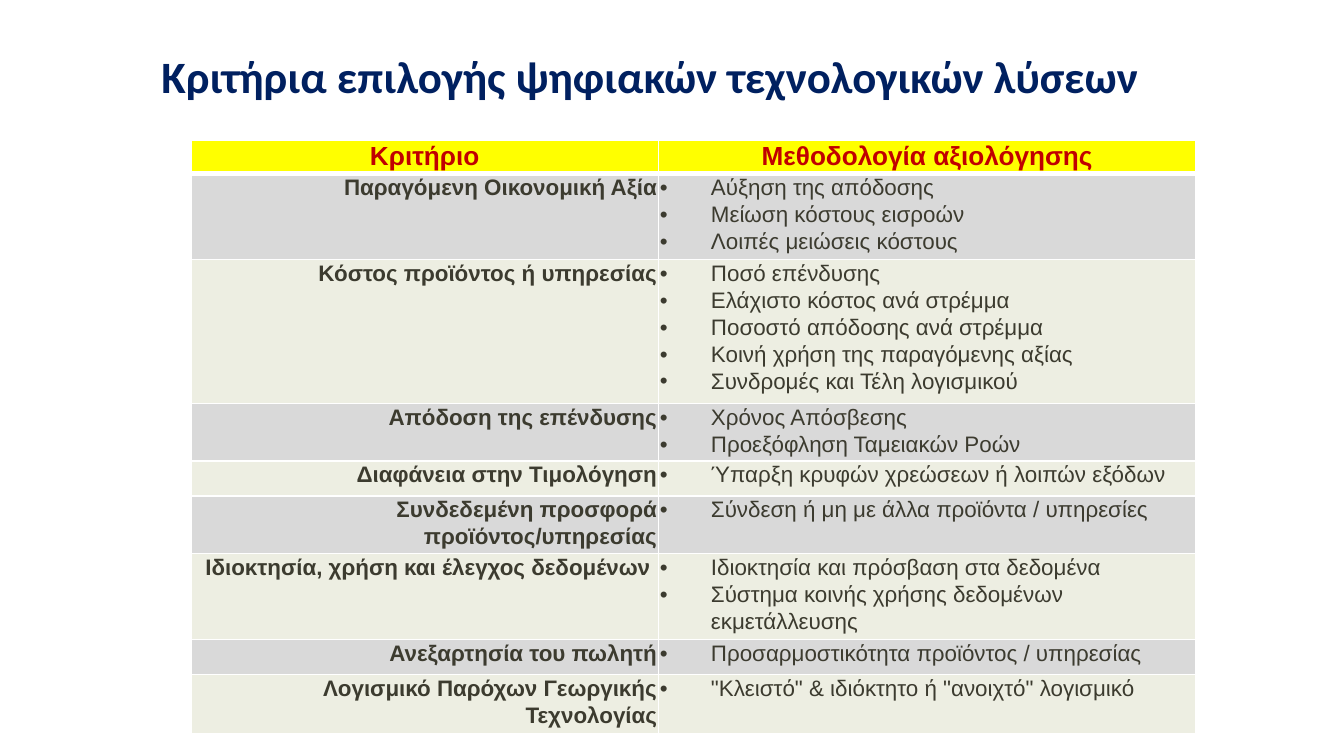
from lxml import etree
from pptx import Presentation
from pptx.dml.color import RGBColor
from pptx.enum.text import MSO_ANCHOR, MSO_AUTO_SIZE, PP_ALIGN
from pptx.oxml.ns import qn
from pptx.util import Inches, Pt

CENTER, LEFT, RIGHT = PP_ALIGN.CENTER, PP_ALIGN.LEFT, PP_ALIGN.RIGHT
TOP = MSO_ANCHOR.TOP
FIT = MSO_AUTO_SIZE.SHAPE_TO_FIT_TEXT

COLORS = {
    "title": "002060",
    "head": "C00000",
    "text": "3C3B2F",
    "yellow": "FFFF00",
    "gray": "D9D9D9",
    "green": "EDEEE2",
    "line": "FFFFFF",
}

TITLE = "Κριτήρια επιλογής ψηφιακών τεχνολογικών λύσεων"
HEADS = ("Κριτήριο", "Μεθοδολογία αξιολόγησης")

# Row height, criterion, evaluation methods
ROWS = [
    (0.61, "Παραγόμενη Οικονομική Αξία",
     ["Αύξηση της απόδοσης", "Μείωση κόστους εισροών",
      "Λοιπές μειώσεις κόστους"]),
    (1.02, "Κόστος προϊόντος ή υπηρεσίας",
     ["Ποσό επένδυσης", "Ελάχιστο κόστος ανά στρέμμα",
      "Ποσοστό απόδοσης ανά στρέμμα", "Κοινή χρήση της παραγόμενης αξίας",
      "Συνδρομές και Τέλη λογισμικού"]),
    (0.41, "Απόδοση της επένδυσης",
     ["Χρόνος Απόσβεσης", "Προεξόφληση Ταμειακών Ροών"]),
    (0.26, "Διαφάνεια στην Τιμολόγηση",
     ["Ύπαρξη κρυφών χρεώσεων ή λοιπών εξόδων"]),
    (0.3, "Συνδεδεμένη προσφορά προϊόντος/υπηρεσίας",
     ["Σύνδεση ή μη με άλλα προϊόντα / υπηρεσίες"]),
    (0.54, "Ιδιοκτησία, χρήση και έλεγχος δεδομένων ",
     ["Ιδιοκτησία και πρόσβαση στα δεδομένα",
      "Σύστημα κοινής χρήσης δεδομένων εκμετάλλευσης"]),
    (0.26, "Ανεξαρτησία του πωλητή",
     ["Προσαρμοστικότητα προϊόντος / υπηρεσίας"]),
    (0.44, "Λογισμικό Παρόχων Γεωργικής Τεχνολογίας",
     ['"Κλειστό" & ιδιόκτητο ή "ανοιχτό" λογισμικό']),
]


class Deck:
    def __init__(self):
        self.prs = Presentation()
        self.prs.slide_width = Inches(10)
        self.prs.slide_height = Inches(10 * 9 / 16)
        self.slide = self.prs.slides.add_slide(self.prs.slide_layouts[5])

    def style(self, para, font, size, color, bold):
        for run in para.runs:
            run.font.name = font
            run.font.size = Pt(size)
            run.font.bold = bold
            run.font.color.rgb = RGBColor.from_string(COLORS[color])

    def title(self, text, left, top, width, height):
        box = self.slide.shapes.title
        box.left, box.top = Inches(left), Inches(top)
        box.width, box.height = Inches(width), Inches(height)
        frame = box.text_frame
        frame.text = text
        frame.word_wrap = False
        frame.auto_size = FIT
        frame.vertical_anchor = TOP
        para = frame.paragraphs[0]
        para.alignment = CENTER
        self.style(para, "Calibri", 24, "title", True)

    def bullet(self, para):
        props = para._p.get_or_add_pPr()
        props.set("marL", str(Inches(0.38)))
        props.set("indent", str(-Inches(0.38)))
        etree.SubElement(props, qn("a:buFont")).set("typeface", "Arial")
        etree.SubElement(props, qn("a:buChar")).set("char", "•")

    def border(self, cell, sides):
        props = cell._tc.get_or_add_tcPr()
        for i, (side, width) in enumerate(sides.items()):
            line = etree.Element(qn("a:ln" + side), w=str(Pt(width)))
            fill = etree.SubElement(line, qn("a:solidFill"))
            tint = etree.SubElement(fill, qn("a:srgbClr"))
            tint.set("val", COLORS["line"])
            props.insert(i, line)

    def cell(self, cell, lines, fill, align, size=12, color="text",
             bold=True, bullets=False):
        cell.fill.solid()
        cell.fill.fore_color.rgb = RGBColor.from_string(COLORS[fill])
        cell.margin_left = cell.margin_right = Inches(0.01)
        cell.margin_top = cell.margin_bottom = 0
        cell.text_frame.text = "\n".join(lines)
        for para in cell.text_frame.paragraphs:
            if bullets:
                self.bullet(para)
            para.alignment = align
            para.line_spacing = 1.07
            self.style(para, "Arial", size, color, bold)

    def table(self, heads, rows, left, top, widths, height):
        frame = self.slide.shapes.add_table(
            len(rows) + 1, len(heads), Inches(left), Inches(top),
            Inches(sum(widths)), Inches(height))
        grid = frame.table
        for col, width in zip(grid.columns, widths):
            col.width = Inches(width)

        # Header row with a thick line below
        grid.rows[0].height = Inches(0.24)
        for i, head in enumerate(heads):
            cell = grid.cell(0, i)
            self.cell(cell, [head], "yellow", CENTER, 14, "head")
            self.border(cell, {"L": 1, "R": 1, "T": 1, "B": 3})

        # Criteria with their methods, in alternating bands
        for i, (tall, name, items) in enumerate(rows, 1):
            fill = "gray" if i % 2 else "green"
            grid.rows[i].height = Inches(tall)
            self.cell(grid.cell(i, 0), [name], fill, RIGHT)
            self.cell(grid.cell(i, 1), items, fill, LEFT,
                      bold=False, bullets=True)
        frame.height = Inches(height)


def main():
    deck = Deck()
    deck.title(TITLE, 1.07, 0.31, 7.53, 0.5)
    deck.table(HEADS, ROWS, 1.42, 1.04, (3.48, 4), 4.19)
    deck.prs.save("out.pptx")


if __name__ == "__main__":
    main()
